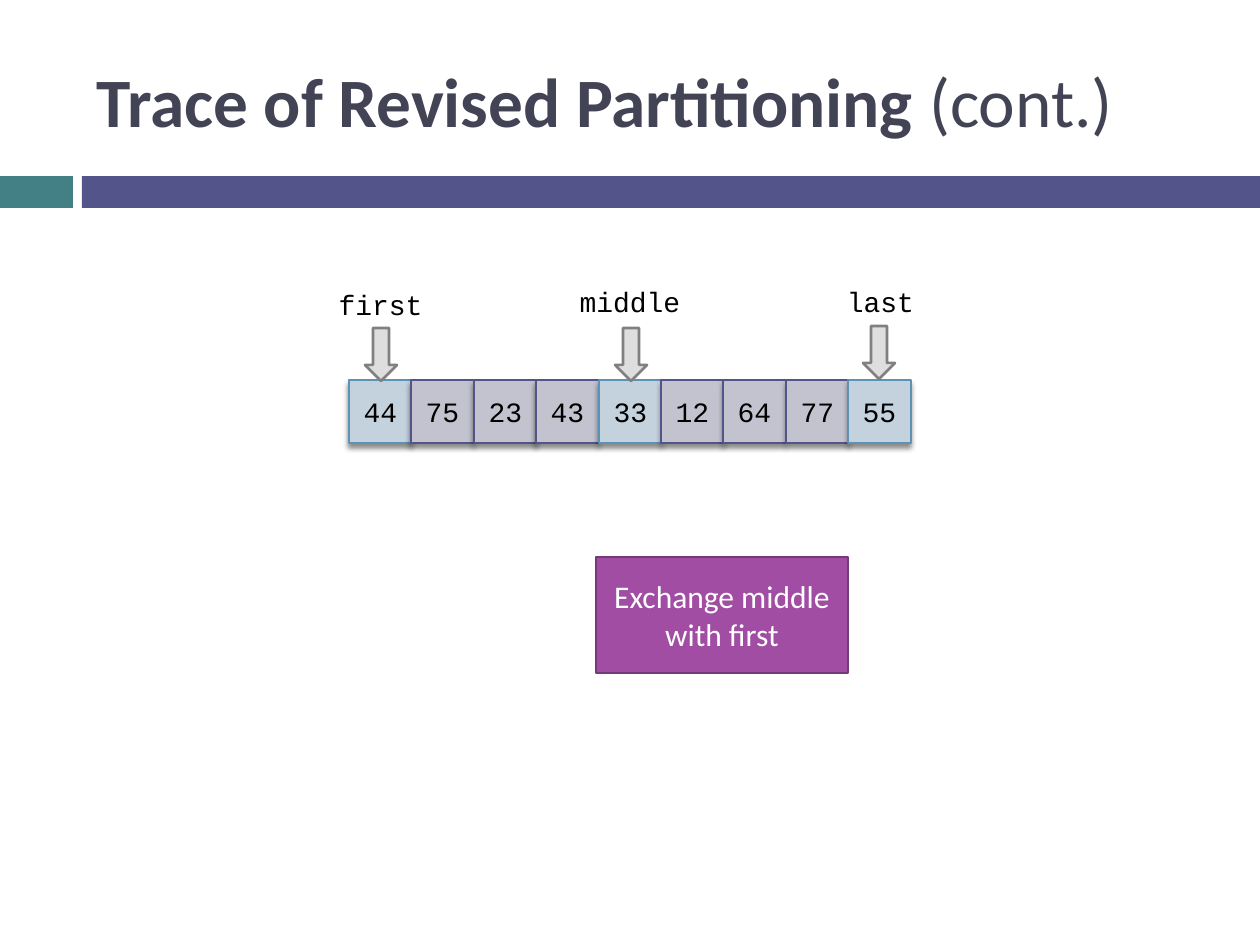
import dataclasses
from typing import Optional

import lxml.etree
import pptx
import pptx.dml.color
import pptx.enum.shapes
import pptx.enum.text
import pptx.oxml.ns
import pptx.util

PX_PER_INCH = 126
SHAPES = pptx.enum.shapes.MSO_SHAPE
ALIGN = pptx.enum.text.PP_ALIGN
ANCHOR = pptx.enum.text.MSO_ANCHOR


@dataclasses.dataclass(frozen=True)
class Theme:
    teal: str = "438086"
    indigo: str = "53548A"
    heading: str = "424456"
    ink: str = "000000"
    white: str = "FFFFFF"
    plain_cell: str = "C3C3CF"
    marked_cell: str = "C4D2DE"
    marked_edge: str = "5C92B5"
    step: str = "A04DA3"
    step_edge: str = "763979"
    arrow: str = "DEDEDE"
    arrow_edge: str = "808080"
    sans: str = "Calibri"
    mono: str = "Courier New"
    title_size: float = 39.6
    step_size: float = 18
    code_size: float = 16
    cell_line: float = 0.79
    bold_line: float = 1.5


@dataclasses.dataclass(frozen=True)
class Box:
    left: int
    top: int
    width: int
    height: int

    def emu(self) -> list[int]:
        return [px(side) for side in dataclasses.astuple(self)]


@dataclasses.dataclass(frozen=True)
class Marker:
    name: str
    label: Box
    arrow: Box


THEME = Theme()
VALUES = (44, 75, 23, 43, 33, 12, 64, 77, 55)
MARKED = (0, 4, 8)
ROW_LEFT, ROW_TOP, ROW_SPAN, CELL = 349, 380, 499, 63
MARKERS = (
    Marker("middle", Box(557, 278, 146, 47), Box(615, 328, 32, 53)),
    Marker("first", Box(324, 281, 113, 47), Box(365, 328, 32, 53)),
    Marker("last", Box(828, 278, 105, 47), Box(863, 326, 32, 53)),
)


def px(length: int) -> int:
    return round(length * 914400 / PX_PER_INCH)


def rgb(colour: str) -> pptx.dml.color.RGBColor:
    return pptx.dml.color.RGBColor.from_string(colour)


def style_run(run, font: str, size: float, colour: str, bold: bool = False) -> None:
    run.font.name = font
    run.font.size = pptx.util.Pt(size)
    run.font.color.rgb = rgb(colour)
    run.font.bold = bold


def draw_shape(shapes, kind, box: Box, fill: str, edge: Optional[str] = None,
               weight: float = 0):
    shape = shapes.add_shape(kind, *box.emu())
    shape.shadow.inherit = False
    shape.fill.solid()
    shape.fill.fore_color.rgb = rgb(fill)
    if edge:
        shape.line.color.rgb = rgb(edge)
        shape.line.width = pptx.util.Pt(weight)
    else:
        shape.line.fill.background()
    return shape


def write_centred(shape, text: str, font: str, size: float, colour: str,
                  anchor=ANCHOR.MIDDLE) -> None:
    frame = shape.text_frame
    frame.word_wrap = True
    frame.vertical_anchor = anchor
    frame.text = text
    paragraph = frame.paragraphs[0]
    paragraph.alignment = ALIGN.CENTER
    style_run(paragraph.runs[0], font, size, colour)


def cast_shadow(shape) -> None:
    qn = pptx.oxml.ns.qn
    effects = shape.element.spPr.find(qn("a:effectLst"))
    shadow = lxml.etree.SubElement(
        effects, qn("a:outerShdw"), blurRad=str(pptx.util.Pt(3)),
        dist=str(pptx.util.Pt(2.4)), dir="5400000", rotWithShape="0")
    colour = lxml.etree.SubElement(shadow, qn("a:srgbClr"), val=THEME.ink)
    lxml.etree.SubElement(colour, qn("a:alpha"), val="45000")


def draw_heading(slide) -> None:
    draw_shape(slide.shapes, SHAPES.RECTANGLE, Box(0, 176, 73, 32), THEME.teal)
    draw_shape(slide.shapes, SHAPES.RECTANGLE, Box(82, 176, 1178, 32), THEME.indigo)
    title = slide.shapes.add_textbox(*Box(84, 32, 1124, 136).emu())
    title.text_frame.word_wrap = True
    title.text_frame.vertical_anchor = ANCHOR.MIDDLE
    paragraph = title.text_frame.paragraphs[0]
    for text, bold in (("Trace of Revised Partitioning ", True), ("(cont.)", False)):
        run = paragraph.add_run()
        run.text = text
        style_run(run, THEME.sans, THEME.title_size, THEME.heading, bold)


def draw_array(slide) -> None:
    row = slide.shapes.add_group_shape()
    for index, value in enumerate(VALUES):
        left = ROW_LEFT + round(index * ROW_SPAN / (len(VALUES) - 1))
        fill, edge = ((THEME.marked_cell, THEME.marked_edge) if index in MARKED
                      else (THEME.plain_cell, THEME.indigo))
        cell = draw_shape(row.shapes, SHAPES.RECTANGLE, Box(left, ROW_TOP, CELL, CELL),
                          fill, edge, THEME.cell_line)
        cast_shadow(cell)
        write_centred(cell, str(value), THEME.mono, THEME.code_size, THEME.ink)


def draw_step(slide) -> None:
    step = draw_shape(slide.shapes, SHAPES.RECTANGLE, Box(596, 557, 252, 116),
                      THEME.step, THEME.step_edge, THEME.bold_line)
    write_centred(step, "Exchange middle with first", THEME.sans, THEME.step_size,
                  THEME.white)


def draw_marker(slide, marker: Marker) -> None:
    draw_shape(slide.shapes, SHAPES.DOWN_ARROW, marker.arrow, THEME.arrow,
               THEME.arrow_edge, THEME.bold_line)
    label = slide.shapes.add_textbox(*marker.label.emu())
    write_centred(label, marker.name, THEME.mono, THEME.code_size, THEME.ink, ANCHOR.TOP)
    label.text_frame.auto_size = pptx.enum.text.MSO_AUTO_SIZE.SHAPE_TO_FIT_TEXT


def main() -> None:
    deck = pptx.Presentation()
    deck.slide_width, deck.slide_height = px(1260), px(945)
    slide = deck.slides.add_slide(deck.slide_layouts[6])
    draw_heading(slide)
    draw_array(slide)
    draw_step(slide)
    for marker in MARKERS:
        draw_marker(slide, marker)
    deck.save("out.pptx")


if __name__ == "__main__":
    main()
